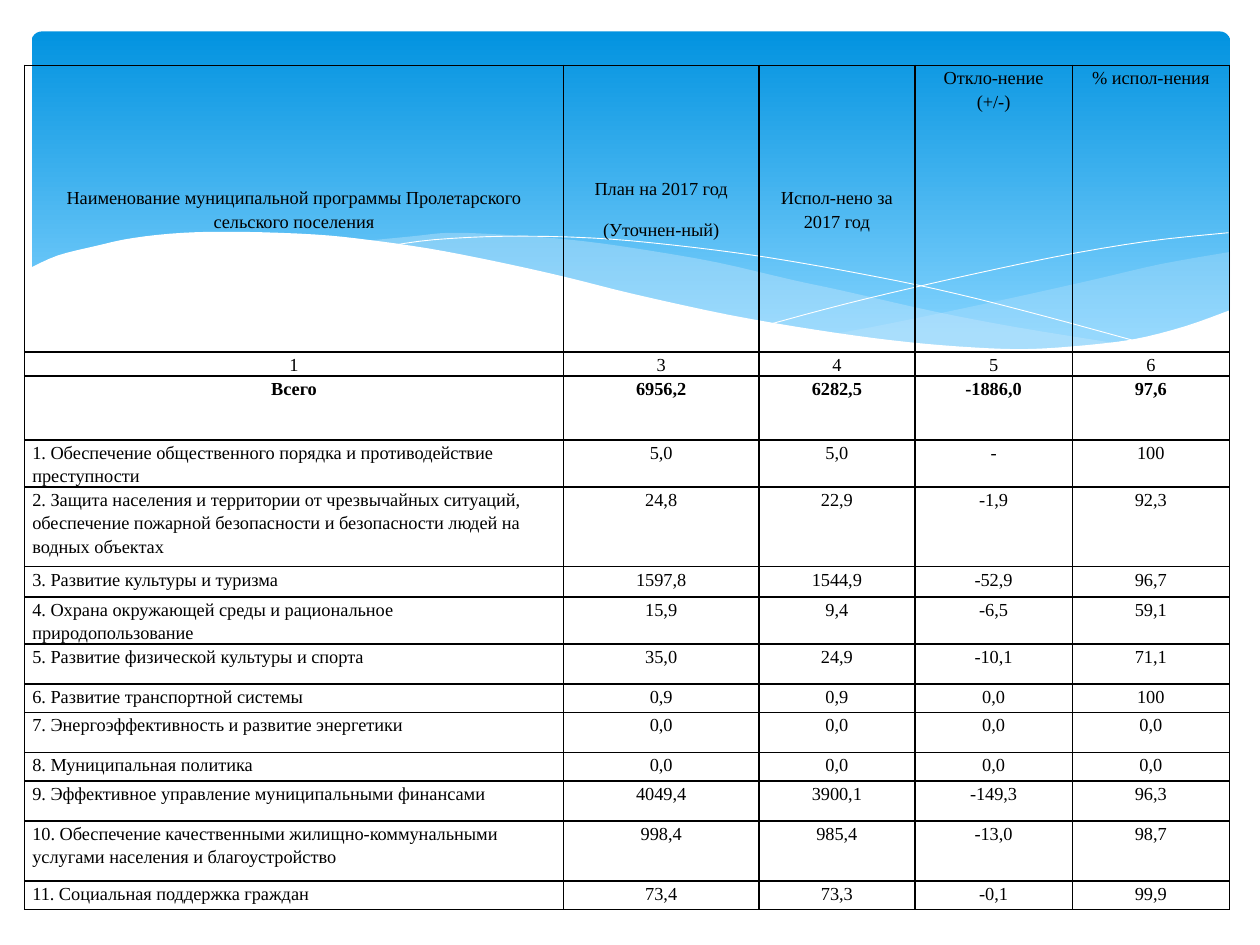
import pptx
import pptx.util
import pptx.dml.color
import pptx.enum.shapes
import pptx.enum.text
import pptx.oxml.ns
from dataclasses import dataclass
from lxml import etree

Pt = pptx.util.Pt
qn = pptx.oxml.ns.qn
Align = pptx.enum.text.PP_ALIGN
Anchor = pptx.enum.text.MSO_ANCHOR


@dataclass(frozen=True)
class Theme:
    font: str = "Times New Roman"
    size: float = 10.5
    ink: str = "000000"
    paper: str = "FFFFFF"
    deep: str = "0293E0"
    sky: str = "83D3FE"
    mist: str = "C6E7FC"
    rule: float = 1
    hair: float = 0.5


theme = Theme()

# Wave edges, in points from the top left corner of the banner
SWELL_TOP = [(685, 126), (645, 133), (602, 143), (543, 156), (490, 167), (458, 173)]
SWELL_LOW = [(458, 173), (490, 177), (527, 181), (560, 182), (597, 181),
             (628, 176), (655, 171), (685, 160)]
CREST_TOP = [(625, 179), (563, 169), (516, 160), (463, 148), (435, 142), (392, 132),
             (352, 125), (317, 120), (284, 117), (242, 115), (218, 117), (188, 120)]
CREST_LOW = [(188, 120), (228, 125), (273, 134), (305, 142), (364, 155), (415, 166),
             (461, 174), (502, 179), (539, 181.5), (571, 182), (599, 181), (625, 179)]
FALL = [(204.5, 122.5), (230, 119), (271, 117), (320, 118), (366, 122), (420, 129),
        (482, 140), (529, 150), (580, 163), (635, 178)]
RISE = [(423, 167), (466, 155.5), (521, 142.5), (584, 129), (637, 120), (684, 115)]
SHORE = [(685.5, 159), (659, 168.5), (629, 176), (594, 180), (564.5, 181.5), (530, 180),
         (492, 176.5), (448.5, 170.5), (399, 162), (344, 150), (304, 140), (263.5, 131),
         (227, 124), (192, 119), (162, 116), (121, 114.5), (87, 115), (58, 118),
         (37, 122.5), (15, 128), (-1.5, 135.5)]
BASE = [(-1.5, 219), (685.5, 219)]

# Table content: column widths, then (row height, cells)
COLS = [308, 111.7, 89.1, 90, 89.7]
HEAD = ["Наименование муниципальной программы Пролетарского сельского поселения",
        "План на 2017 год\n(Уточнен-ный)", "Испол-нено за 2017 год",
        "Откло-нение (+/-)", "% испол-нения"]
ROWS = [
    (163.8, HEAD),
    (13.7, ["1", "3", "4", "5", "6"]),
    (36.6, ["Всего", "6956,2", "6282,5", "-1886,0", "97,6"]),
    (26.8, ["1. Обеспечение общественного порядка и противодействие преступности",
            "5,0", "5,0", "-", "100"]),
    (45.6, ["2. Защита населения и территории от чрезвычайных ситуаций, обеспечение "
            "пожарной безопасности и безопасности людей на водных объектах",
            "24,8", "22,9", "-1,9", "92,3"]),
    (17.4, ["3. Развитие культуры и туризма", "1597,8", "1544,9", "-52,9", "96,7"]),
    (26.6, ["4. Охрана окружающей среды и рациональное природопользование",
            "15,9", "9,4", "-6,5", "59,1"]),
    (22.8, ["5. Развитие физической культуры и спорта", "35,0", "24,9", "-10,1", "71,1"]),
    (16.4, ["6. Развитие транспортной системы", "0,9", "0,9", "0,0", "100"]),
    (22.8, ["7. Энергоэффективность и развитие энергетики", "0,0", "0,0", "0,0", "0,0"]),
    (16.4, ["8. Муниципальная политика", "0,0", "0,0", "0,0", "0,0"]),
    (22.8, ["9. Эффективное управление муниципальными финансами",
            "4049,4", "3900,1", "-149,3", "96,3"]),
    (34.3, ["10. Обеспечение качественными жилищно-коммунальными услугами населения "
            "и благоустройство", "998,4", "985,4", "-13,0", "98,7"]),
    (16.4, ["11. Социальная поддержка граждан", "73,4", "73,3", "-0,1", "99,9"]),
]


def rgb(code):
    return pptx.dml.color.RGBColor.from_string(code)


def write(frame, text, align=Align.CENTER, bold=False, after=10):
    """Fill a text frame, one paragraph for each line."""
    frame.word_wrap = True
    for num, line in enumerate(text.split("\n")):
        para = frame.add_paragraph() if num else frame.paragraphs[0]
        para.alignment, para.line_spacing = align, 1.15
        para.space_after = Pt(after)
        run = para.add_run()
        run.text = line
        run.font.name, run.font.size = theme.font, Pt(theme.size)
        run.font.bold, run.font.color.rgb = bold, rgb(theme.ink)


def smooth(knots, steps=4):
    """Points of a Catmull-Rom curve through the knots."""
    ends = [knots[0], *knots, knots[-1]]
    curve = [knots[0]]
    for a, b, c, d in zip(ends, ends[1:], ends[2:], ends[3:]):
        for step in range(1, steps + 1):
            t = step / steps
            curve.append(tuple(
                (2 * q + (r - p) * t + (2 * p - 5 * q + 4 * r - s) * t ** 2
                 + (3 * q - p - 3 * r + s) * t ** 3) / 2
                for p, q, r, s in zip(a, b, c, d)))
    return curve


def wave(slide, left, top, points, fill=None, alpha=100):
    """Draw a filled wave, or an open white line if there is no fill."""
    spots = [(Pt(left + x), Pt(top + y)) for x, y in points]
    pen = slide.shapes.build_freeform(*spots[0])
    pen.add_line_segments(spots[1:], close=fill is not None)
    shape = pen.convert_to_shape()
    shape.shadow.inherit = False
    if fill is None:
        shape.fill.background()
        shape.line.color.rgb = rgb(theme.paper)
        shape.line.width = Pt(theme.hair)
        return
    shape.line.fill.background()
    shape.fill.solid()
    shape.fill.fore_color.rgb = rgb(fill)
    if alpha < 100:
        tint = shape.fill._xPr.find(".//" + qn("a:srgbClr"))
        etree.SubElement(tint, qn("a:alpha"), val=str(alpha * 1000))


def banner(slide, left, top, width, height):
    """Blue rounded panel with waves over its lower part."""
    kind = pptx.enum.shapes.MSO_SHAPE.ROUNDED_RECTANGLE
    panel = slide.shapes.add_shape(kind, Pt(left), Pt(top), Pt(width), Pt(height))
    panel.adjustments[0] = 0.03
    panel.shadow.inherit = False
    panel.line.fill.background()
    panel.fill.gradient()
    panel.fill.gradient_angle = 270
    shades = [(0, theme.deep), (0.9, theme.sky)]
    for stop, (place, code) in zip(panel.fill.gradient_stops, shades):
        stop.position, stop.color.rgb = place, rgb(code)
    wave(slide, left, top, smooth(SWELL_TOP) + smooth(SWELL_LOW), theme.mist, 29)
    wave(slide, left, top, smooth(CREST_TOP) + smooth(CREST_LOW), theme.mist, 40)
    for line in (FALL, RISE):
        wave(slide, left, top, smooth(line))
    wave(slide, left, top, smooth(SHORE) + BASE, theme.paper)


def frame(cell):
    """Rule all four sides of a cell and leave it clear."""
    props = cell._tc.get_or_add_tcPr()
    for side in ("a:lnL", "a:lnR", "a:lnT", "a:lnB"):
        edge = etree.SubElement(props, qn(side), w=str(Pt(theme.rule)))
        solid = etree.SubElement(edge, qn("a:solidFill"))
        etree.SubElement(solid, qn("a:srgbClr"), val=theme.ink)
    cell.fill.background()


def budget(slide, left, top):
    """Table of programmes: plan, spending, difference and share."""
    high = sum(tall for tall, _ in ROWS)
    grid = slide.shapes.add_table(len(ROWS), len(COLS), Pt(left), Pt(top),
                                  Pt(sum(COLS)), Pt(high)).table
    grid.first_row = grid.horz_banding = False
    for col, wide in zip(grid.columns, COLS):
        col.width = Pt(wide)
    for r, (tall, texts) in enumerate(ROWS):
        grid.rows[r].height = Pt(tall)
        for c, text in enumerate(texts):
            cell = grid.cell(r, c)
            cell.margin_left = cell.margin_right = Pt(4.5 if r else 8)
            cell.margin_top = cell.margin_bottom = 0
            middle = r == 0 and c < 3
            cell.vertical_anchor = Anchor.MIDDLE if middle else Anchor.TOP
            frame(cell)
            name = r > 2 and c == 0
            write(cell.text_frame, text, bold=r == 2,
                  align=Align.LEFT if name else Align.CENTER)


def main():
    deck = pptx.Presentation()
    deck.slide_width, deck.slide_height = Pt(720), Pt(540)
    slide = deck.slides.add_slide(deck.slide_layouts[6])
    banner(slide, 18, 18, 685, 194)
    budget(slide, 14, 37.4)
    deck.save("out.pptx")


if __name__ == "__main__":
    main()
